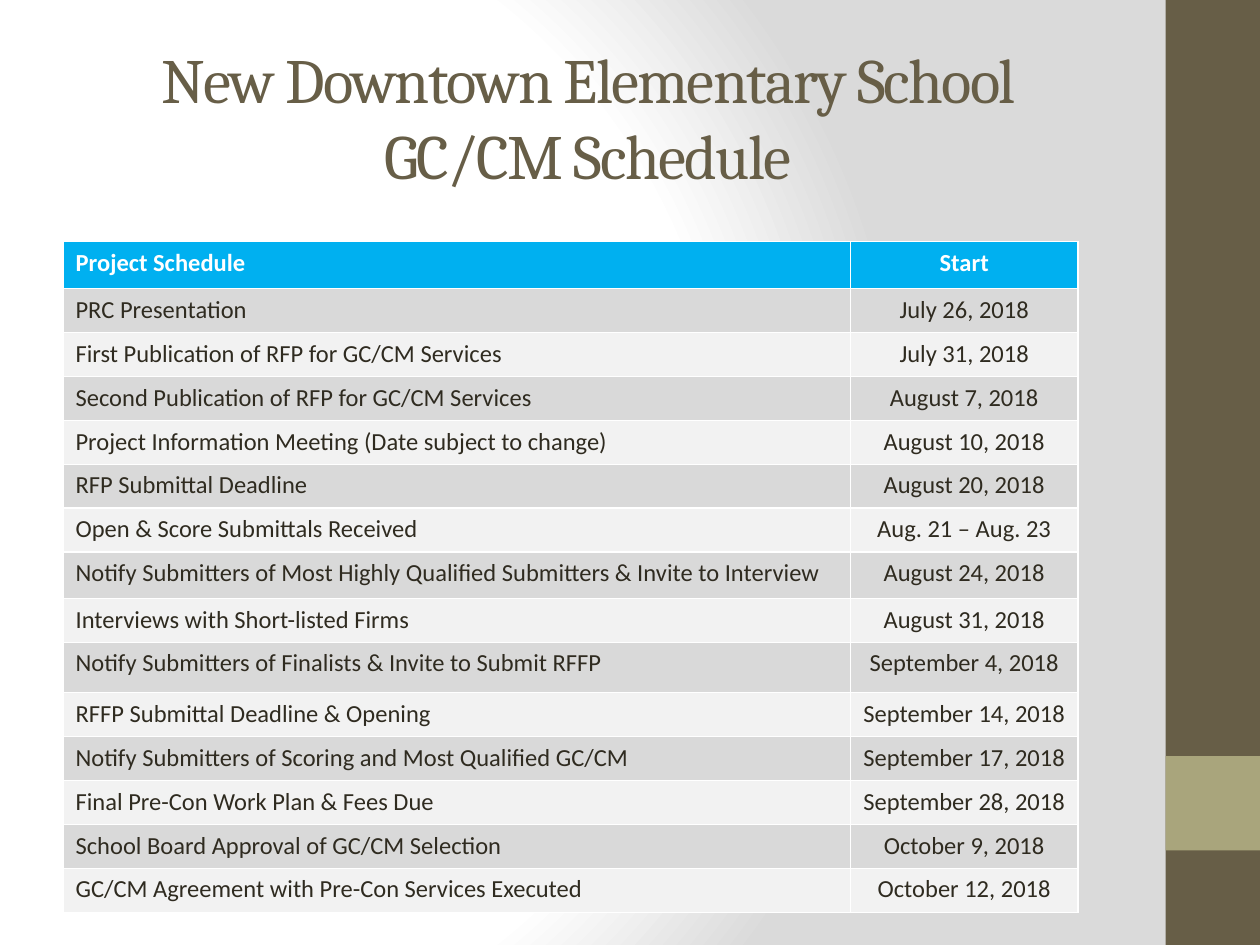
from dataclasses import dataclass

from pptx import Presentation
from pptx.dml.color import RGBColor
from pptx.enum.shapes import MSO_SHAPE
from pptx.enum.text import MSO_ANCHOR, PP_ALIGN
from pptx.oxml import parse_xml
from pptx.oxml.ns import nsdecls
from pptx.util import Pt

RECTANGLE = MSO_SHAPE.RECTANGLE
MIDDLE = MSO_ANCHOR.MIDDLE
LEFT, CENTER = PP_ALIGN.LEFT, PP_ALIGN.CENTER


@dataclass(frozen=True)
class Theme:
    brown: str = "675E47"
    olive: str = "A9A57C"
    header: str = "00B0F0"
    dark_band: str = "D9D9D9"
    light_band: str = "F2F2F2"
    white: str = "FFFFFF"
    backdrop: str = "DADADA"
    text: str = "2F2B20"
    title_font: str = "Cambria"
    body_font: str = "Calibri"
    title_size: int = 36
    body_size: int = 14


theme = Theme()


def style_run(span, font, size, color, bold=False):
    span.font.name = font
    span.font.size = Pt(size)
    span.font.bold = bold
    span.font.color.rgb = RGBColor.from_string(color)


def add_borders(cell, sides):
    properties = cell._tc.get_or_add_tcPr()
    for position, side in enumerate(sides):
        properties.insert(position, parse_xml(
            f'<a:ln{side} {nsdecls("a")} w="12700"><a:solidFill>'
            f'<a:srgbClr val="{theme.white}"/></a:solidFill></a:ln{side}>'))


deck = Presentation()
deck.slide_width, deck.slide_height = Pt(720), Pt(540)
page = deck.slides.add_slide(deck.slide_layouts[5])

# Background: radial gradient, white at its centre
stops = "".join(
    f'<a:gs pos="{position * 1000}"><a:srgbClr val="{color}"/></a:gs>'
    for position, color in ((0, theme.white), (75, theme.white), (100, theme.backdrop)))
page._element.cSld.insert(0, parse_xml(
    f'<p:bg {nsdecls("p", "a")}><p:bgPr><a:gradFill rotWithShape="1">'
    f'<a:gsLst>{stops}</a:gsLst><a:path path="circle">'
    '<a:fillToRect l="20000" t="50000" r="100000" b="50000"/></a:path>'
    '</a:gradFill><a:effectLst/></p:bgPr></p:bg>'))

# Side band with its accent square
for top, height, color in ((0, 540, theme.brown), (432, 54, theme.olive)):
    band = page.shapes.add_shape(RECTANGLE, Pt(666), Pt(top), Pt(54), Pt(height))
    band.shadow.inherit = False
    band.fill.solid()
    band.fill.fore_color.rgb = RGBColor.from_string(color)
    band.line.fill.background()

# Title
title = page.shapes.title
title.left, title.top, title.width, title.height = Pt(36), Pt(21.6), Pt(600), Pt(90)
title.text_frame.text = "New Downtown Elementary School GC/CM Schedule"
title.text_frame.word_wrap = True
title.text_frame.vertical_anchor = MIDDLE
para = title.text_frame.paragraphs[0]
para.alignment = CENTER
span = para.runs[0]
style_run(span, theme.title_font, theme.title_size, theme.brown)
span.font._element.set("spc", "-100")

# Schedule table
schedule = [
    ("Project Schedule", "Start"),
    ("PRC Presentation", "July 26, 2018"),
    ("First Publication of RFP for GC/CM Services", "July 31, 2018"),
    ("Second Publication of RFP for GC/CM Services", "August 7, 2018"),
    ("Project Information Meeting (Date subject to change)", "August 10, 2018"),
    ("RFP Submittal Deadline", "August 20, 2018"),
    ("Open & Score Submittals Received", "Aug. 21 – Aug. 23"),
    ("Notify Submitters of Most Highly Qualified Submitters & Invite to Interview",
     "August 24, 2018"),
    ("Interviews with Short-listed Firms", "August 31, 2018"),
    ("Notify Submitters of Finalists & Invite to Submit RFFP", "September 4, 2018"),
    ("RFFP Submittal Deadline & Opening", "September 14, 2018"),
    ("Notify Submitters of Scoring and Most Qualified GC/CM", "September 17, 2018"),
    ("Final Pre-Con Work Plan & Fees Due", "September 28, 2018"),
    ("School Board Approval of GC/CM Selection", "October 9, 2018"),
    ("GC/CM Agreement with Pre-Con Services Executed", "October 12, 2018"),
]
row_height = 25.1
tall_rows = {0: 27, 7: 26.5, 9: 28.8}
table = page.shapes.add_table(
    len(schedule), 2, Pt(36), Pt(138), Pt(580), Pt(383.5)).table
table.columns[0].width, table.columns[1].width = Pt(450), Pt(130)

for row_index, entries in enumerate(schedule):
    table.rows[row_index].height = Pt(tall_rows.get(row_index, row_height))
    is_header = row_index == 0
    if is_header:
        fill = theme.header
    else:
        fill = theme.dark_band if row_index % 2 else theme.light_band
    for column_index, entry in enumerate(entries):
        cell = table.cell(row_index, column_index)
        cell.fill.solid()
        cell.fill.fore_color.rgb = RGBColor.from_string(fill)
        add_borders(cell, ("L" if column_index else "R") + ("B" if is_header else "TB"))
        cell.text_frame.text = entry
        para = cell.text_frame.paragraphs[0]
        para.alignment = CENTER if column_index else LEFT
        style_run(para.runs[0], theme.body_font, theme.body_size,
                  theme.white if is_header else theme.text, is_header)

deck.save("out.pptx")
